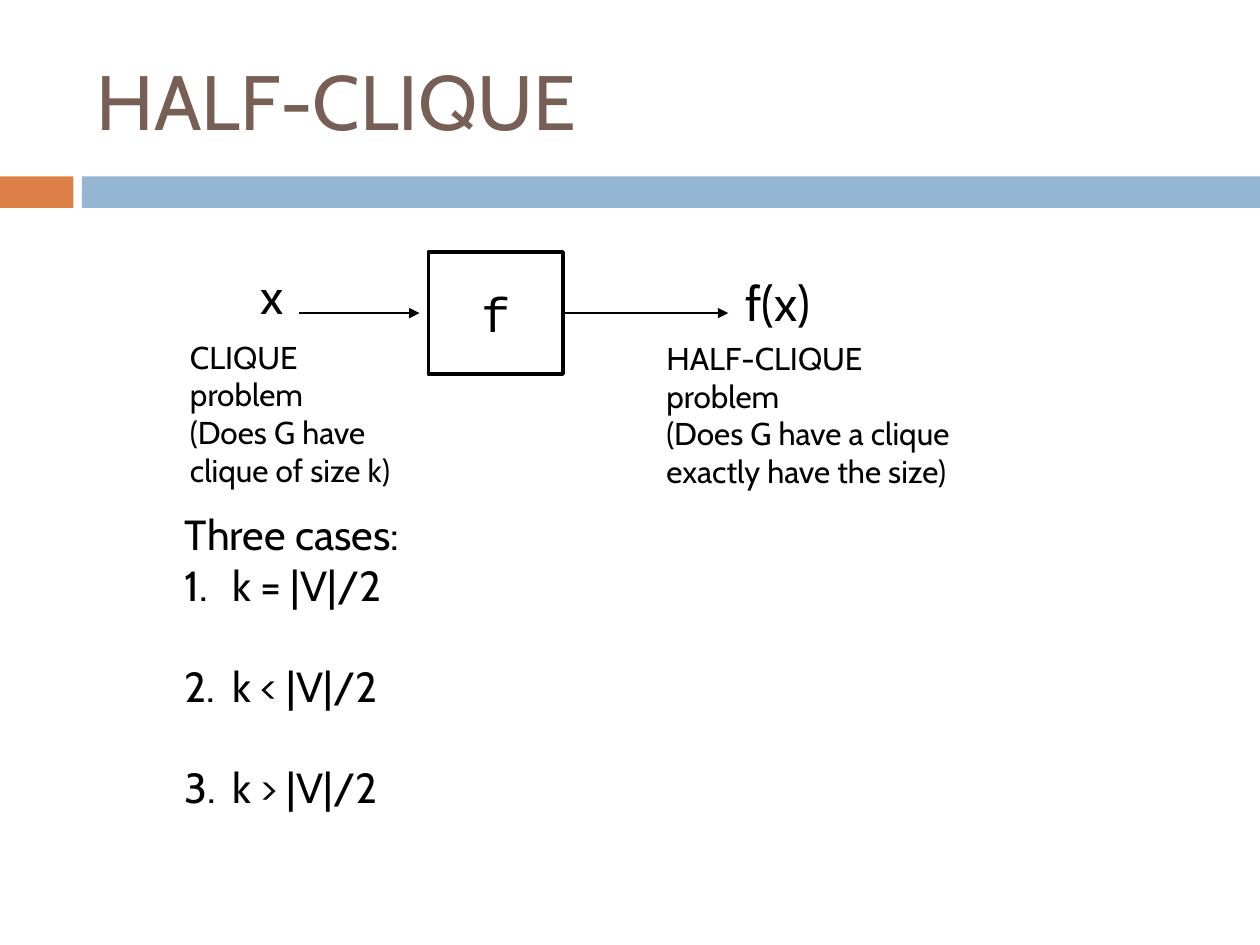
from dataclasses import dataclass

from lxml import etree
from pptx import Presentation
from pptx.dml.color import RGBColor
from pptx.enum import shapes, text
from pptx.oxml.ns import qn
from pptx.util import Pt


@dataclass(frozen=True)
class Theme:
    font: str = "Cabin"
    code_font: str = "Courier New"
    ink: str = "000000"
    paper: str = "FFFFFF"
    heading: str = "775F55"
    accent: str = "DD8047"
    band: str = "94B6D2"
    title_size: int = 44
    symbol_size: int = 28
    case_size: int = 24
    note_size: int = 18
    case_gap: float = 29


THEME = Theme()

TITLE = "HALF-CLIQUE"
TITLE_AREA = (48, 18, 642, 78)
BANDS = [(0, 42, THEME.accent), (46.8, 673.2, THEME.band)]  # left, width, colour
BAND_TOP, BAND_HEIGHT = 100.8, 18

FUNCTION = "f"
FUNCTION_AREA = (244.8, 144, 77, 69.8)
ARROW_IN = (170.6, 239.8)
ARROW_OUT = (322, 416.2)

LABELS = [  # lines, area, size
    (["x"], (141.8, 148.3, 29, 41), THEME.symbol_size),
    (["f(x)"], (419, 151.9, 54, 41), THEME.symbol_size),
    (["CLIQUE problem", "(Does G have", "clique of size k)"],
     (101.5, 189.4, 134.6, 94), THEME.note_size),
    (["HALF-CLIQUE problem", "(Does G have a clique", "exactly have the size)"],
     (373.7, 190.1, 180, 94), THEME.note_size),
]
CASES_HEADING = "Three cases:"
CASES = ["k = |V|/2", "k < |V|/2", "k > |V|/2"]
CASES_AREA = (98.6, 287.3, 146.2, 211)
NUMBER_INDENT = 27


def points(values):
    return [Pt(value) for value in values]


def colour(code):
    return RGBColor.from_string(code)


def write(frame, lines, size, font=THEME.font, ink=THEME.ink,
          align=text.PP_ALIGN.LEFT, anchor=text.MSO_ANCHOR.TOP, wrap=True):
    """Fill a text frame, one paragraph per line, and return the paragraphs."""
    frame.word_wrap = wrap
    frame.vertical_anchor = anchor
    for index, line in enumerate(lines):
        para = frame.add_paragraph() if index else frame.paragraphs[0]
        para.alignment = align
        span = para.add_run()
        span.text = line
        span.font.name = font
        span.font.size = Pt(size)
        span.font.color.rgb = colour(ink)
    return frame.paragraphs


def add_rectangle(page, area, fill, outline=None):
    box = page.shapes.add_shape(shapes.MSO_SHAPE.RECTANGLE, *points(area))
    box.shadow.inherit = False
    box.fill.solid()
    box.fill.fore_color.rgb = colour(fill)
    if outline:
        box.line.color.rgb = colour(outline)
        box.line.width = Pt(2)
    else:
        box.line.fill.background()
    return box


def add_arrow(page, start, end, height):
    arrow = page.shapes.add_connector(
        shapes.MSO_CONNECTOR.STRAIGHT, *points((start, height, end, height)))
    arrow.line.color.rgb = colour(THEME.ink)
    arrow.line.width = Pt(1.5)
    etree.SubElement(arrow.line._get_or_add_ln(), qn("a:tailEnd"), type="triangle")
    etree.SubElement(arrow._element.spPr, qn("a:effectLst"))
    return arrow


def number(para):
    properties = para._p.get_or_add_pPr()
    properties.set("marL", str(Pt(NUMBER_INDENT)))
    properties.set("indent", str(-Pt(NUMBER_INDENT)))
    para.space_after = Pt(THEME.case_gap)
    etree.SubElement(properties, qn("a:buFont"), typeface="+mj-lt")
    etree.SubElement(properties, qn("a:buAutoNum"), type="arabicPeriod")


def add_text(page, lines, area, size):
    box = page.shapes.add_textbox(*points(area))
    return write(box.text_frame, lines, size)


def main():
    deck = Presentation()
    deck.slide_width, deck.slide_height = points((720, 540))
    page = deck.slides.add_slide(deck.slide_layouts[5])

    for left, width, fill in BANDS:
        add_rectangle(page, (left, BAND_TOP, width, BAND_HEIGHT), fill)

    title = page.shapes.title
    title.left, title.top, title.width, title.height = points(TITLE_AREA)
    write(title.text_frame, [TITLE], THEME.title_size, ink=THEME.heading,
          anchor=text.MSO_ANCHOR.MIDDLE)

    function = add_rectangle(page, FUNCTION_AREA, THEME.paper, THEME.ink)
    write(function.text_frame, [FUNCTION], THEME.symbol_size, font=THEME.code_font,
          align=text.PP_ALIGN.CENTER, anchor=text.MSO_ANCHOR.MIDDLE, wrap=False)

    middle = FUNCTION_AREA[1] + FUNCTION_AREA[3] / 2
    add_arrow(page, *ARROW_IN, middle)
    add_arrow(page, *ARROW_OUT, middle).begin_connect(function, 3)

    for lines, area, size in LABELS:
        add_text(page, lines, area, size)

    cases = add_text(page, [CASES_HEADING, *CASES], CASES_AREA, THEME.case_size)
    for para in cases[1:]:
        number(para)

    deck.save("out.pptx")


if __name__ == "__main__":
    main()
